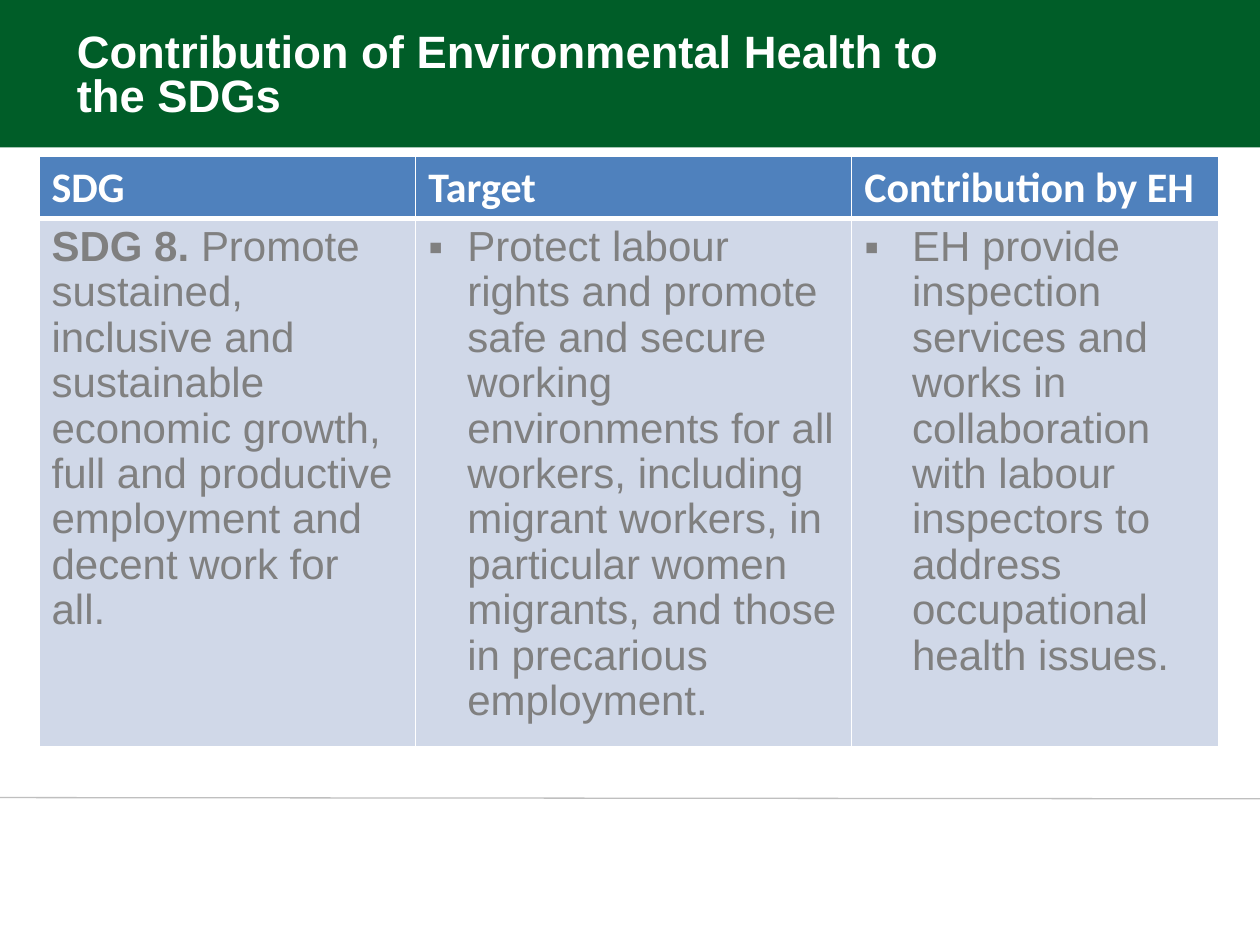
from dataclasses import dataclass

from lxml.etree import SubElement
from pptx import Presentation
from pptx.dml.color import RGBColor
from pptx.enum.shapes import MSO_CONNECTOR, MSO_SHAPE
from pptx.enum.text import MSO_ANCHOR, MSO_AUTO_SIZE, PP_ALIGN
from pptx.oxml.ns import qn
from pptx.util import Inches, Pt

COLORS = {"band": "005D28", "rule": "BFBFBF", "header": "4F81BD",
          "body": "D0D8E8", "text": "808080", "white": "FFFFFF"}
COL_WIDTHS = (2.99, 3.46, 2.91)
ROW_HEIGHTS = (0.49, 4.19)
HEADER_FONT = {"name": "Calibri", "size": Pt(24), "bold": True}
BODY_FONT = {"name": "Arial", "size": Pt(24), "bold": False}
TITLE_FONT = {"name": "Arial", "size": Pt(25.9), "bold": True}


@dataclass
class Column:
    header: str
    body: str
    lead: str = ""
    indent: float = 0


COLUMNS = (
    Column("SDG", "Promote sustained, inclusive and sustainable economic growth, "
           "full and productive employment and decent work for all.", lead="SDG 8. "),
    Column("Target", "Protect labour rights and promote safe and secure working "
           "environments for all workers, including migrant workers, in particular "
           "women migrants, and those in precarious employment.", indent=0.31),
    Column("Contribution by EH", "EH provide inspection services and works in "
           "collaboration with labour inspectors to address occupational health issues.",
           indent=0.38),
)


def rgb(name: str) -> RGBColor:
    return RGBColor.from_string(COLORS[name])


def add_run(p, text: str, color: str, fmt: dict) -> None:
    r = p.add_run()
    r.text = text
    for key, value in fmt.items():
        setattr(r.font, key, value)
    r.font.color.rgb = rgb(color)


def set_borders(cell, bottom: float) -> None:
    tcPr = cell._tc.get_or_add_tcPr()
    widths = {"lnL": 1, "lnR": 1, "lnT": 1, "lnB": bottom}
    for i, (tag, width) in enumerate(widths.items()):
        ln = SubElement(tcPr, qn(f"a:{tag}"), w=str(Pt(width)))
        fill = SubElement(ln, qn("a:solidFill"))
        SubElement(fill, qn("a:srgbClr"), val=COLORS["white"])
        tcPr.insert(i, ln)


def style_cell(cell, fill: str, bottom: float):
    cell.fill.solid()
    cell.fill.fore_color.rgb = rgb(fill)
    set_borders(cell, bottom)
    p = cell.text_frame.paragraphs[0]
    p.line_spacing = 0.97
    return p


def set_bullet(p, indent: float) -> None:
    pPr = p._p.get_or_add_pPr()
    pPr.set("marL", str(Inches(indent)))
    pPr.set("indent", str(-Inches(indent)))
    SubElement(pPr, qn("a:buFont"), typeface="Arial")
    SubElement(pPr, qn("a:buChar"), char="▪")


def add_band(s, prs) -> None:
    sp = s.shapes.add_shape(MSO_SHAPE.RECTANGLE, 0, 0, prs.slide_width, Inches(1.17))
    sp.shadow.inherit = False
    sp.fill.solid()
    sp.fill.fore_color.rgb = rgb("band")
    sp.line.fill.background()


def add_rule(s, prs) -> None:
    line = s.shapes.add_connector(MSO_CONNECTOR.STRAIGHT, 0, Inches(6.33),
                                  prs.slide_width, Inches(6.34))
    line.line.color.rgb = rgb("rule")
    line.line.width = Pt(0.75)
    SubElement(line._element.spPr, qn("a:effectLst"))


def add_title(s) -> None:
    sp = s.shapes.title
    sp.left, sp.top, sp.width, sp.height = map(Inches, (0.51, 0.13, 7.32, 0.88))
    tf = sp.text_frame
    tf.word_wrap = True
    tf.auto_size = MSO_AUTO_SIZE.NONE
    tf.vertical_anchor = MSO_ANCHOR.BOTTOM
    p = tf.paragraphs[0]
    p.alignment = PP_ALIGN.LEFT
    p.line_spacing = 0.8
    add_run(p, "Contribution of Environmental Health to the SDGs", "white", TITLE_FONT)
    s.shapes._spTree.append(sp._element)  # in front of the band


def add_sdg_table(s) -> None:
    table = s.shapes.add_table(
        len(ROW_HEIGHTS), len(COLUMNS), Inches(0.31), Inches(1.24),
        Inches(sum(COL_WIDTHS)), Inches(sum(ROW_HEIGHTS))).table
    for row, height in zip(table.rows, ROW_HEIGHTS):
        row.height = Inches(height)
    for i, (column, width) in enumerate(zip(COLUMNS, COL_WIDTHS)):
        table.columns[i].width = Inches(width)
        p = style_cell(table.cell(0, i), "header", 3)
        add_run(p, column.header, "white", HEADER_FONT)
        p = style_cell(table.cell(1, i), "body", 1)
        if column.indent:
            set_bullet(p, column.indent)
        if column.lead:
            add_run(p, column.lead, "text", BODY_FONT | {"bold": True})
        add_run(p, column.body, "text", BODY_FONT)


def main() -> None:
    prs = Presentation()
    prs.slide_width, prs.slide_height = Inches(10), Inches(7.5)
    s = prs.slides.add_slide(prs.slide_layouts[5])
    # Band and footer rule
    add_band(s, prs)
    add_rule(s, prs)
    # Title and table
    add_title(s)
    add_sdg_table(s)
    prs.save("out.pptx")


if __name__ == "__main__":
    main()
